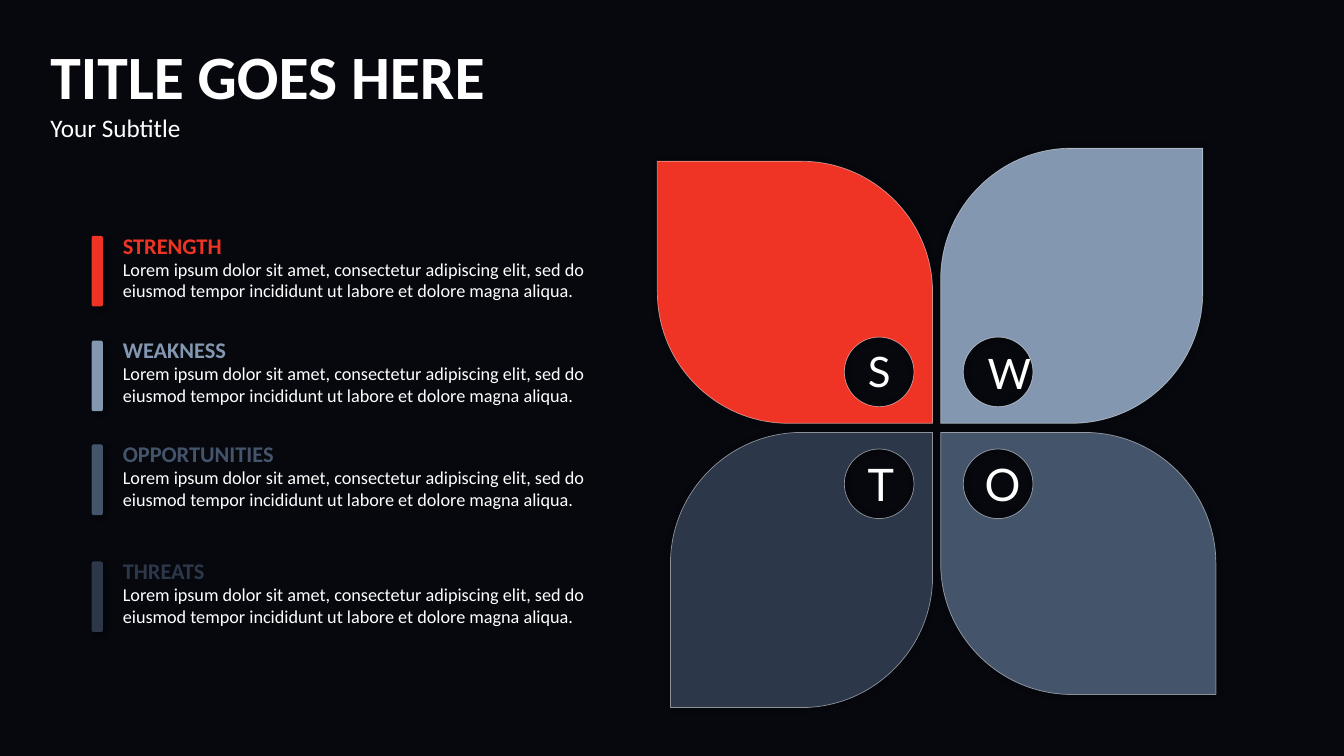
from pptx import Presentation
from pptx.dml.color import RGBColor
from pptx.enum.shapes import MSO_SHAPE
from pptx.enum.text import MSO_ANCHOR, MSO_AUTO_SIZE, PP_ALIGN
from pptx.oxml import parse_xml
from pptx.oxml.ns import nsdecls, qn
from pptx.util import Inches, Pt

NIGHT = RGBColor(0x22, 0x2A, 0x49)
BLACK = RGBColor(0x00, 0x00, 0x00)
WHITE = RGBColor(0xFF, 0xFF, 0xFF)
RED = RGBColor(0xEF, 0x34, 0x25)
MIST = RGBColor(0x83, 0x97, 0xB1)
SLATE = RGBColor(0x44, 0x54, 0x6B)
NAVY = RGBColor(0x2C, 0x37, 0x49)

TITLE = [("TITLE GOES HERE", 44, True), ("Your Subtitle", 18, False)]
LOREM = ("Lorem ipsum dolor sit amet, consectetur adipiscing elit, sed do "
         "eiusmod tempor incididunt ut labore et dolore magna aliqua.")
ITEMS = [("STRENGTH", RED, 2.34), ("WEAKNESS", MIST, 3.38),
         ("OPPORTUNITIES", SLATE, 4.41), ("THREATS", NAVY, 5.57)]
# letter, size, colour, side across, side down, letter left, letter top
PETALS = [("W", 30, MIST, 1, -1, 9.61, 3.4), ("S", 30, RED, -1, -1, 8.42, 3.38),
          ("O", 32, SLATE, 1, 1, 9.58, 4.5), ("T", 32, NAVY, -1, 1, 8.42, 4.5)]

WIDE, HIGH = 13.33, 7.5
INNER_X = {-1: 9.25, 1: 9.33}
INNER_Y = {-1: 4.2, 1: 4.29}
LONG, SHORT, CURVE = 2.73, 2.6, 1.3
HOLE = 0.69 / 2
BEND = 0.55


def bow(start, corner, end):
    pulls = [tuple(p + (c - p) * BEND for p, c in zip(point, corner))
             for point in (start, end)]
    return [*pulls, end]


def fade(color, share):
    color.append(parse_xml(f'<a:alpha {nsdecls("a")} val="{share * 1000}"/>'))


def paint(shape, color):
    shape.fill.solid()
    shape.fill.fore_color.rgb = color


def shade(shape, blur, dist, angle):
    shape.shadow.inherit = False
    effects = shape._element.spPr.find(qn("a:effectLst"))
    effects.append(parse_xml(
        f'<a:outerShdw {nsdecls("a")} blurRad="{Pt(blur)}" dist="{Pt(dist)}" '
        f'dir="{angle * 60000}" algn="ctr" rotWithShape="0">'
        '<a:srgbClr val="000000"><a:alpha val="40000"/></a:srgbClr></a:outerShdw>'))


def style(para, size, color, bold=False, face="Calibri"):
    font = para.font
    font.name, font.size, font.bold = face, Pt(size), bold
    font.color.rgb = color


def write(shapes, text, box, size, color, bold=False):
    frame = shapes.add_textbox(*map(Inches, box)).text_frame
    frame.word_wrap = True
    frame.text = text
    style(frame.paragraphs[0], size, color, bold)


def smooth(shape, kinds):
    lines = list(shape._element.iter(qn("a:lnTo")))
    for kind in kinds:
        if kind == "L":
            lines.pop(0)
            continue
        curve = parse_xml(f'<a:cubicBezTo {nsdecls("a")}/>')
        lines[0].addprevious(curve)
        for line in lines[:3]:
            curve.append(line[0])
            line.getparent().remove(line)
        del lines[:3]


def petal(shapes, color, across, down):
    wide, tall = (LONG, SHORT) if across == down else (SHORT, LONG)
    edge = [(0, 0), (wide - CURVE, 0),
            *bow((wide - CURVE, 0), (wide, 0), (wide, CURVE)),
            (wide, tall), (CURVE, tall),
            *bow((CURVE, tall), (0, tall), (0, tall - CURVE))]
    x, y = 0.55 + 0.02 * across, 0.51
    tips = [(x, y - HOLE), (x - HOLE, y), (x, y + HOLE), (x + HOLE, y)]
    hole = [tips[0]]
    for i, tip in enumerate(tips):
        end = tips[(i + 1) % 4]
        hole += bow(tip, (tip[0] + end[0] - x, tip[1] + end[1] - y), end)

    def place(points):
        return [(Inches(INNER_X[across] + across * px),
                 Inches(INNER_Y[down] + down * py)) for px, py in points]

    edge, hole = place(edge), place(hole)
    pen = shapes.build_freeform(*hole[0])
    pen.add_line_segments(hole[1:])
    pen.move_to(*edge[0])
    pen.add_line_segments(edge[1:])
    leaf = pen.convert_to_shape()
    smooth(leaf, "CCCC" + "LCLLC")
    paint(leaf, color)
    leaf.line.color.rgb = WHITE
    leaf.line.width = Pt(0.5)
    fade(leaf.line._ln.find(".//" + qn("a:srgbClr")), 50)
    shade(leaf, 5, 0, 0)


def main():
    deck = Presentation()
    deck.slide_width, deck.slide_height = Inches(WIDE), Inches(HIGH)
    slide = deck.slides.add_slide(deck.slide_layouts[5])
    slide.background.fill.solid()
    slide.background.fill.fore_color.rgb = NIGHT
    shapes = slide.shapes
    title = shapes.title

    veil = shapes.add_shape(MSO_SHAPE.RECTANGLE, 0, 0, Inches(WIDE), Inches(HIGH))
    paint(veil, BLACK)
    fade(veil._element.spPr.find(".//" + qn("a:srgbClr")), 80)
    veil.line.fill.background()
    veil.shadow.inherit = False
    title._element.addprevious(veil._element)

    title.left, title.top, title.width, title.height = map(Inches, (0.4, 0.33, 6.5, 1.14))
    frame = title.text_frame
    frame.auto_size = MSO_AUTO_SIZE.NONE
    frame.vertical_anchor = MSO_ANCHOR.TOP
    frame.text = "\n".join(text for text, _, _ in TITLE)
    for para, (_, size, bold) in zip(frame.paragraphs, TITLE):
        para.alignment = PP_ALIGN.LEFT
        style(para, size, WHITE, bold)

    for _, _, color, across, down, _, _ in PETALS:
        petal(shapes, color, across, down)

    for head, color, top in ITEMS:
        group = shapes.add_group_shape().shapes
        write(group, LOREM, (1.12, top + 0.17, 4.96, 0.76), 13, WHITE)
        write(group, head, (1.12, top - 0.09, 3.1, 0.37), 16, color, True)
        bar = shapes.add_shape(MSO_SHAPE.ROUNDED_RECTANGLE,
                               *map(Inches, (0.91, top, 0.11, 0.7)))
        paint(bar, color)
        bar.line.fill.background()
        shade(bar, 4, 3, 45)

    for text, size, _, _, _, left, top in PETALS:
        disc = shapes.add_shape(MSO_SHAPE.OVAL, *map(Inches, (left, top, 0.6, 0.6)))
        disc.fill.background()
        disc.line.fill.background()
        disc.shadow.inherit = False
        disc.text_frame.text = text
        para = disc.text_frame.paragraphs[0]
        para.alignment = PP_ALIGN.CENTER
        style(para, size, WHITE, face="Lato")

    deck.save("out.pptx")


if __name__ == "__main__":
    main()
